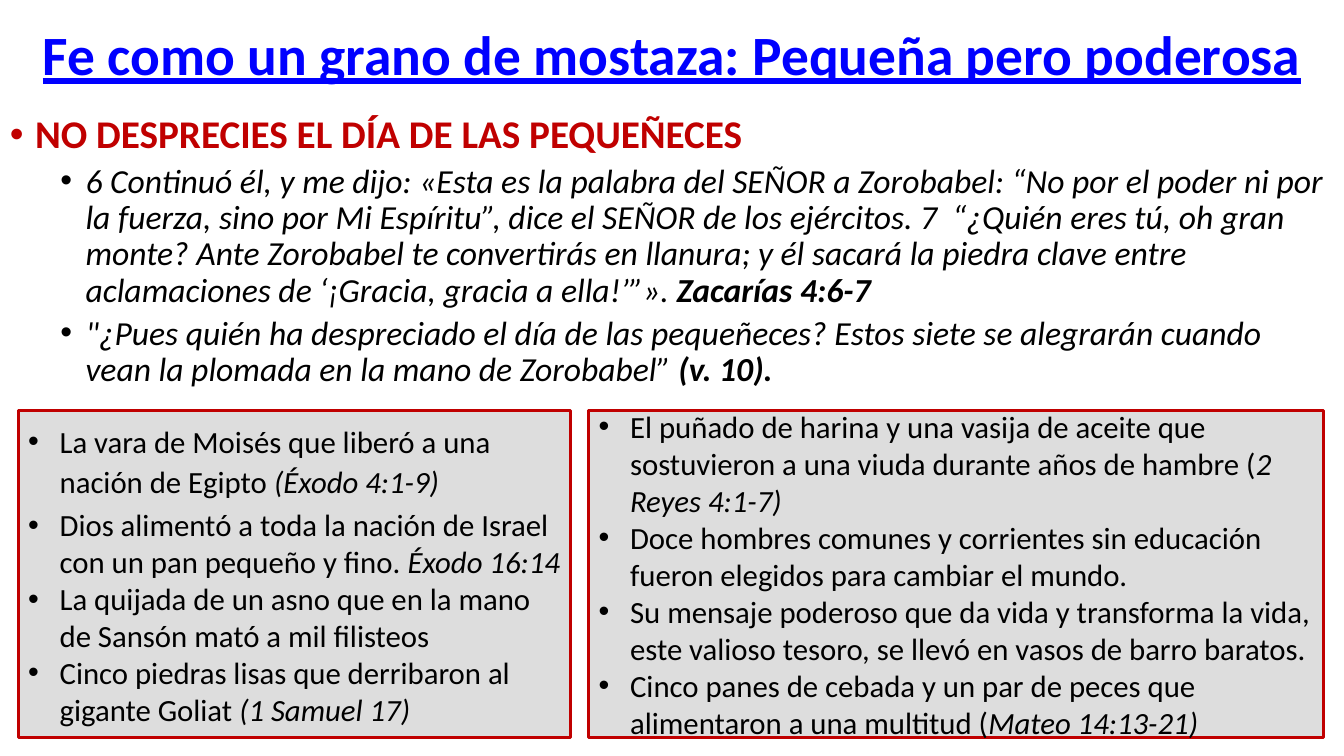
from lxml.etree import SubElement
from pptx import Presentation
from pptx.dml.color import RGBColor
from pptx.enum.shapes import MSO_SHAPE as Shape
from pptx.enum.text import MSO_ANCHOR as Anchor, PP_ALIGN as Align
from pptx.oxml.ns import qn
from pptx.util import Pt

# Content: each bullet is (plain text, highlighted reference)
TITLE = "Fe como un grano de mostaza: Pequeña pero poderosa"
HEADING = "NO DESPRECIES EL DÍA DE LAS PEQUEÑECES"
VERSES = [
    ("6 Continuó él, y me dijo: «Esta es la palabra del SEÑOR a Zorobabel: “No por el poder ni por "
     "la fuerza, sino por Mi Espíritu”, dice el SEÑOR de los ejércitos. 7  “¿Quién eres tú, oh gran "
     "monte? Ante Zorobabel te convertirás en llanura; y él sacará la piedra clave entre "
     "aclamaciones de ‘¡Gracia, gracia a ella!’”». ", "Zacarías 4:6-7"),
    ("\"¿Pues quién ha despreciado el día de las pequeñeces? Estos siete se alegrarán cuando "
     "vean la plomada en la mano de Zorobabel” ", "(v. 10)."),
]
OLD_EXAMPLES = [
    ("La vara de Moisés que liberó a una nación de Egipto ", "(Éxodo 4:1-9)"),
    ("Dios alimentó a toda la nación de Israel con un pan pequeño y fino. ", "Éxodo 16:14"),
    ("La quijada de un asno que en la mano de Sansón mató a mil filisteos", ""),
    ("Cinco piedras lisas que derribaron al gigante Goliat ", "(1 Samuel 17)"),
]
MORE_EXAMPLES = [
    ("El puñado de harina y una vasija de aceite que sostuvieron a una viuda durante años de "
     "hambre (", "2 Reyes 4:1-7)"),
    ("Doce hombres comunes y corrientes sin educación fueron elegidos para cambiar el mundo.", ""),
    ("Su mensaje poderoso que da vida y transforma la vida, este valioso tesoro, se llevó en "
     "vasos de barro baratos.", ""),
    ("Cinco panes de cebada y un par de peces que alimentaron a una multitud (",
     "Mateo 14:13-21)"),
]

BLUE = RGBColor(0x00, 0x00, 0xFF)
RED = RGBColor(0xC0, 0x00, 0x00)
BLACK = RGBColor(0x00, 0x00, 0x00)
GREY = RGBColor(0xDD, 0xDD, 0xDD)

# Layout, in points
WIDTH, HEIGHT = 960, 540
MARGIN, GAP = 13, 13
PANEL_TOP, PANEL_HEIGHT = 293, 234
LEFT_WIDTH = 394.5
RIGHT_START = MARGIN + LEFT_WIDTH + GAP


def add_para(frame, spans, size, color=BLACK, align=Align.LEFT, level=0, indent=None,
             hang=18, spacing=1.0, before=0, after=0):
    """Add a paragraph; spans holds (text, font settings), indent adds a bullet."""
    para = frame.paragraphs[0]
    if para.runs:
        para = frame.add_paragraph()
    para.level = level
    if indent is not None:
        props = para._p.get_or_add_pPr()
        props.set("marL", str(Pt(indent)))
        props.set("indent", str(-Pt(hang)))
        SubElement(props, qn("a:buFont")).set("typeface", "Arial")
        SubElement(props, qn("a:buChar")).set("char", "•")
    para.alignment = align
    para.line_spacing = spacing
    para.space_before, para.space_after = Pt(before), Pt(after)
    for text, style in spans:
        if not text:
            continue
        span = para.add_run()
        span.text = text
        font = span.font
        font.name, font.size, font.color.rgb = "Calibri", Pt(size), color
        for key, value in style.items():
            setattr(font, key, value)
    return para


def add_box(page, left, top, width, height, anchor=Anchor.TOP):
    box = page.shapes.add_textbox(Pt(left), Pt(top), Pt(width), Pt(height))
    box.text_frame.word_wrap = True
    box.text_frame.vertical_anchor = anchor
    return box.text_frame


def add_panel(page, left, width, examples):
    panel = page.shapes.add_shape(Shape.RECTANGLE, Pt(left), Pt(PANEL_TOP),
                                  Pt(width), Pt(PANEL_HEIGHT))
    panel.shadow.inherit = False
    panel.fill.solid()
    panel.fill.fore_color.rgb = GREY
    panel.line.color.rgb = RED
    panel.line.width = Pt(2.25)
    frame = panel.text_frame
    frame.word_wrap = True
    frame.vertical_anchor = Anchor.MIDDLE
    return [add_para(frame, [(text, {}), (reference, {"italic": True})], 22,
                     indent=22.5, hang=22.5) for text, reference in examples]


def main():
    deck = Presentation()
    deck.slide_width, deck.slide_height = Pt(WIDTH), Pt(HEIGHT)
    page = deck.slides.add_slide(deck.slide_layouts[6])

    # Title
    frame = add_box(page, MARGIN, 12.5, WIDTH - 2 * MARGIN, 57, Anchor.MIDDLE)
    add_para(frame, [(TITLE, {"bold": True, "underline": True})], 39.6, BLUE,
             Align.CENTER, spacing=0.9)

    # Heading and verses
    frame = add_box(page, 0, 78.5, WIDTH, 206.5)
    add_para(frame, [(HEADING, {"bold": True})], 28, RED, indent=18, spacing=0.9)
    for text, reference in VERSES:
        add_para(frame, [(text, {"italic": True}), (reference, {"italic": True, "bold": True})],
                 24, level=1, indent=54, spacing=0.9, before=5)

    # Panels of examples
    first = add_panel(page, MARGIN, LEFT_WIDTH, OLD_EXAMPLES)[0]
    first.line_spacing, first.space_after = 1.07, Pt(4.8)
    add_panel(page, RIGHT_START, WIDTH - MARGIN - 1.5 - RIGHT_START, MORE_EXAMPLES)

    deck.save("out.pptx")


if __name__ == "__main__":
    main()
